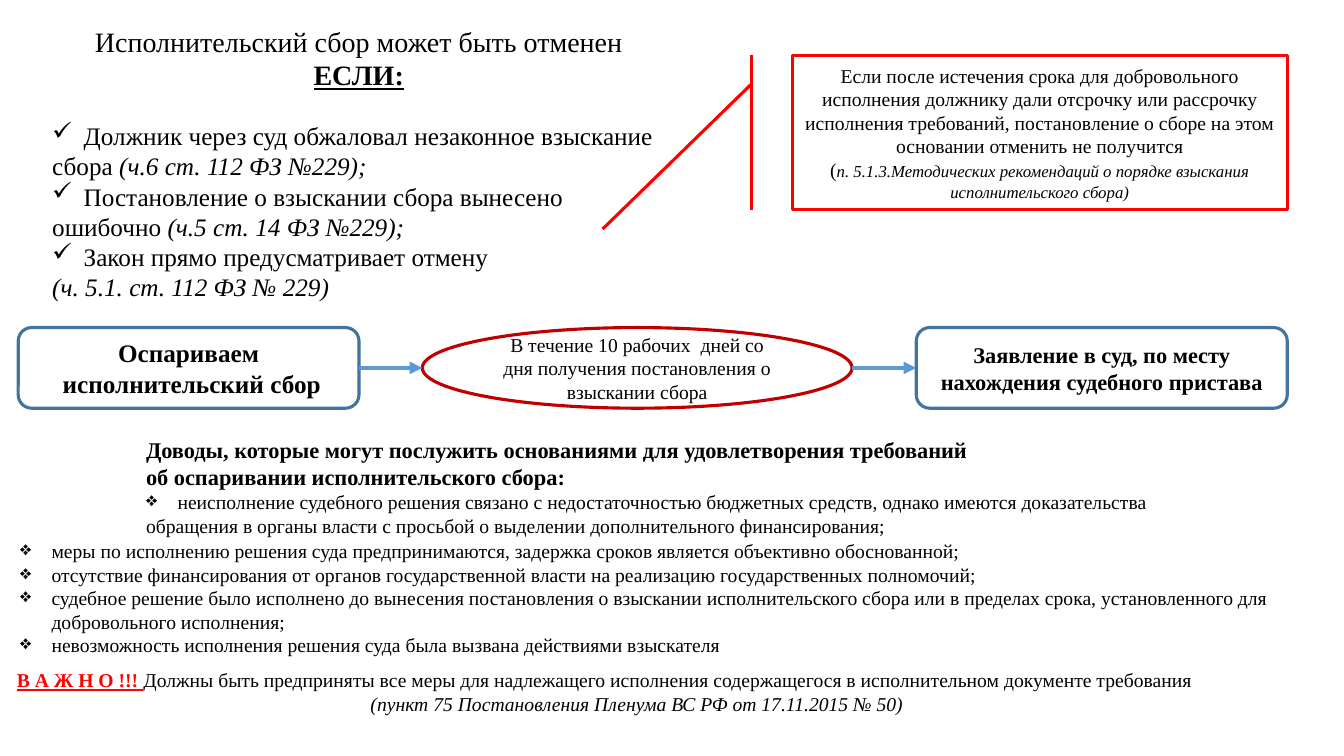
import pptx
import pptx.dml.color
import pptx.enum.shapes
import pptx.enum.text
import pptx.oxml
import pptx.util
from lxml import etree

Pt = pptx.util.Pt
Shape = pptx.enum.shapes.MSO_SHAPE
Anchor = pptx.enum.text.MSO_ANCHOR
Align = pptx.enum.text.PP_ALIGN

THEME = {
    "font": "Times New Roman",
    "text": "000000",
    "alert": "FF0000",
    "step": "43739E",
    "deadline": "C00000",
    "arrow": "5B9BD5",
    "title": 20,
    "large": 18,
    "medium": 16,
    "body": 14,
    "note": 12,
    "outline": 2.25,
    "arrow_width": 3,
    "indent": 22.5,
}

# A paragraph is (runs, size, alignment, bullet); a run is (text, style),
# where the style letters are b(old), i(talic), u(nderlined) and r(ed).
CENTER, LEFT, JUSTIFY = Align.CENTER, Align.LEFT, Align.JUSTIFY
CHECK, DIAMOND = "✓", "❖"

TITLE = [
    ([("Исполнительский сбор может быть отменен", "")], "title", CENTER, None),
    ([("ЕСЛИ:", "bu")], "title", CENTER, None),
]
GROUNDS = [
    ([("Должник через суд обжаловал незаконное взыскание", "")], "large", JUSTIFY, CHECK),
    ([("сбора ", ""), ("(ч.6 ст. 112 ФЗ №229);", "i")], "large", JUSTIFY, None),
    ([("Постановление о взыскании сбора вынесено", "")], "large", JUSTIFY, CHECK),
    ([("ошибочно ", ""), ("(ч.5 ст. 14 ФЗ №229);", "i")], "large", JUSTIFY, None),
    ([("Закон прямо предусматривает отмену", "")], "large", JUSTIFY, CHECK),
    ([("(ч. 5.1. ст. 112 ФЗ № 229)", "i")], "large", JUSTIFY, None),
]
EXCEPTION = [
    ([("Если после истечения срока для добровольного исполнения должнику дали отсрочку "
       "или рассрочку исполнения требований, постановление о сборе на этом основании "
       "отменить не получится", "")], "body", CENTER, None),
    ([("(", "", "body"),
      ("п. 5.1.3.Методических рекомендаций о порядке взыскания исполнительского сбора)", "i")],
     "note", CENTER, None),
]
ARGUMENTS_INTRO = [
    ([("Доводы, которые могут послужить основаниями для удовлетворения требований", "b")],
     "medium", LEFT, None),
    ([("об оспаривании исполнительского сбора:", "b")], "medium", LEFT, None),
    ([("неисполнение судебного решения связано с недостаточностью бюджетных средств, "
       "однако имеются доказательства", "")], "body", LEFT, DIAMOND),
    ([("обращения в органы власти с просьбой о выделении дополнительного финансирования;", "")],
     "body", LEFT, None),
]
ARGUMENTS = [([(text, "")], "body", LEFT, DIAMOND) for text in (
    "меры по исполнению решения суда предпринимаются, задержка сроков является "
    "объективно обоснованной;",
    "отсутствие финансирования от органов государственной власти на реализацию "
    "государственных полномочий;",
    "судебное решение было исполнено до вынесения постановления о взыскании "
    "исполнительского сбора или в пределах срока, установленного для добровольного исполнения;",
    "невозможность исполнения решения суда была вызвана действиями взыскателя",
)]
IMPORTANT = [
    ([("В А Ж Н О !!! ", "bur"),
      ("Должны быть предприняты все меры для надлежащего исполнения содержащегося "
       "в исполнительном документе требования", "")], "body", LEFT, None),
    ([("(пункт 75 Постановления Пленума ВС РФ от 17.11.2015 № 50)", "i")], "body", CENTER, None),
]

# left, top, width, height, paragraphs
TITLE_FRAME = (30.24, 13.68, 452, 54)
TEXT_BOXES = [
    (30.24, 82.5, 452, 137, GROUNDS),
    (97.2, 308.16, 794, 80, ARGUMENTS_INTRO),
    (7.2, 381.6, 944.6, 92, ARGUMENTS),
    (5.04, 473.76, 900, 58, IMPORTANT),
]
CALLOUT = (566, 39.6, 353.5, 110.2)

FLOW_TOP, FLOW_HEIGHT = 234, 57.6
# left, width, preset, outline colour, paragraphs
FLOW = [
    (13, 243.4, Shape.ROUNDED_RECTANGLE, "step", [
        ([("Оспариваем", "b")], "large", CENTER, None),
        ([(" исполнительский сбор", "b")], "large", CENTER, None)]),
    (301.7, 307, Shape.OVAL, "deadline", [
        ([("В течение 10 рабочих  дней со дня получения постановления о взыскании сбора", "")],
         "body", CENTER, None)]),
    (654.5, 265, Shape.ROUNDED_RECTANGLE, "step", [
        ([("Заявление в суд, по месту нахождения судебного пристава", "b")],
         "medium", CENTER, None)]),
]


def color(name):
    return pptx.dml.color.RGBColor.from_string(THEME[name])


def add_bullet(para, character):
    properties = para._p.get_or_add_pPr()
    indent = Pt(THEME["indent"])
    properties.set("marL", str(indent))
    properties.set("indent", str(-indent))
    bullet = etree.SubElement(properties, pptx.oxml.ns.qn("a:buChar"))
    bullet.set("char", character)


def style_font(font, style):
    font.bold = "b" in style
    font.italic = "i" in style
    font.underline = "u" in style
    font.color.rgb = color("alert" if "r" in style else "text")


def write(frame, paragraphs, anchor=Anchor.TOP):
    frame.word_wrap = True
    frame.auto_size = pptx.enum.text.MSO_AUTO_SIZE.NONE
    frame.vertical_anchor = anchor
    for index, (runs, size, alignment, bullet) in enumerate(paragraphs):
        para = frame.add_paragraph() if index else frame.paragraphs[0]
        para.alignment = alignment
        if bullet:
            add_bullet(para, bullet)
        para.font.name = THEME["font"]
        para.font.size = Pt(THEME[size])
        if len(runs) == 1:
            style_font(para.font, runs[0][1])
        for text, style, *own_size in runs:
            span = para.add_run()
            span.text = text
            if len(runs) > 1:
                style_font(span.font, style)
            if own_size:
                span.font.size = Pt(THEME[own_size[0]])


def add_outlined(page, preset, bounds, outline, paragraphs):
    shape = page.shapes.add_shape(preset, *map(Pt, bounds))
    shape.shadow.inherit = False
    shape.fill.background()
    shape.line.color.rgb = color(outline)
    shape.line.width = Pt(THEME["outline"])
    write(shape.text_frame, paragraphs, Anchor.MIDDLE)


def add_arrow(page, start, end, y):
    arrow = page.shapes.add_connector(
        pptx.enum.shapes.MSO_CONNECTOR.STRAIGHT, Pt(start), Pt(y), Pt(end), Pt(y))
    arrow.line.color.rgb = color("arrow")
    arrow.line.width = Pt(THEME["arrow_width"])
    head = etree.SubElement(arrow.line._get_or_add_ln(), pptx.oxml.ns.qn("a:tailEnd"))
    head.set("type", "triangle")
    etree.SubElement(arrow._element.spPr, pptx.oxml.ns.qn("a:effectLst"))


def main():
    deck = pptx.Presentation()
    deck.slide_width, deck.slide_height = Pt(960), Pt(540)
    page = deck.slides.add_slide(deck.slide_layouts.get_by_name("Title Only"))

    title = page.shapes.title
    title.left, title.top, title.width, title.height = map(Pt, TITLE_FRAME)
    write(title.text_frame, TITLE)

    add_outlined(page, Shape.LINE_CALLOUT_1_BORDER_AND_ACCENT_BAR, CALLOUT, "alert", EXCEPTION)
    for left, width, preset, outline, paragraphs in FLOW:
        add_outlined(page, preset, (left, FLOW_TOP, width, FLOW_HEIGHT), outline, paragraphs)
    for (left, width, *_), (next_left, *_) in zip(FLOW, FLOW[1:]):
        add_arrow(page, left + width, next_left, FLOW_TOP + FLOW_HEIGHT / 2)

    for *bounds, paragraphs in TEXT_BOXES:
        box = page.shapes.add_textbox(*map(Pt, bounds))
        write(box.text_frame, paragraphs)

    deck.save("out.pptx")


if __name__ == "__main__":
    main()
